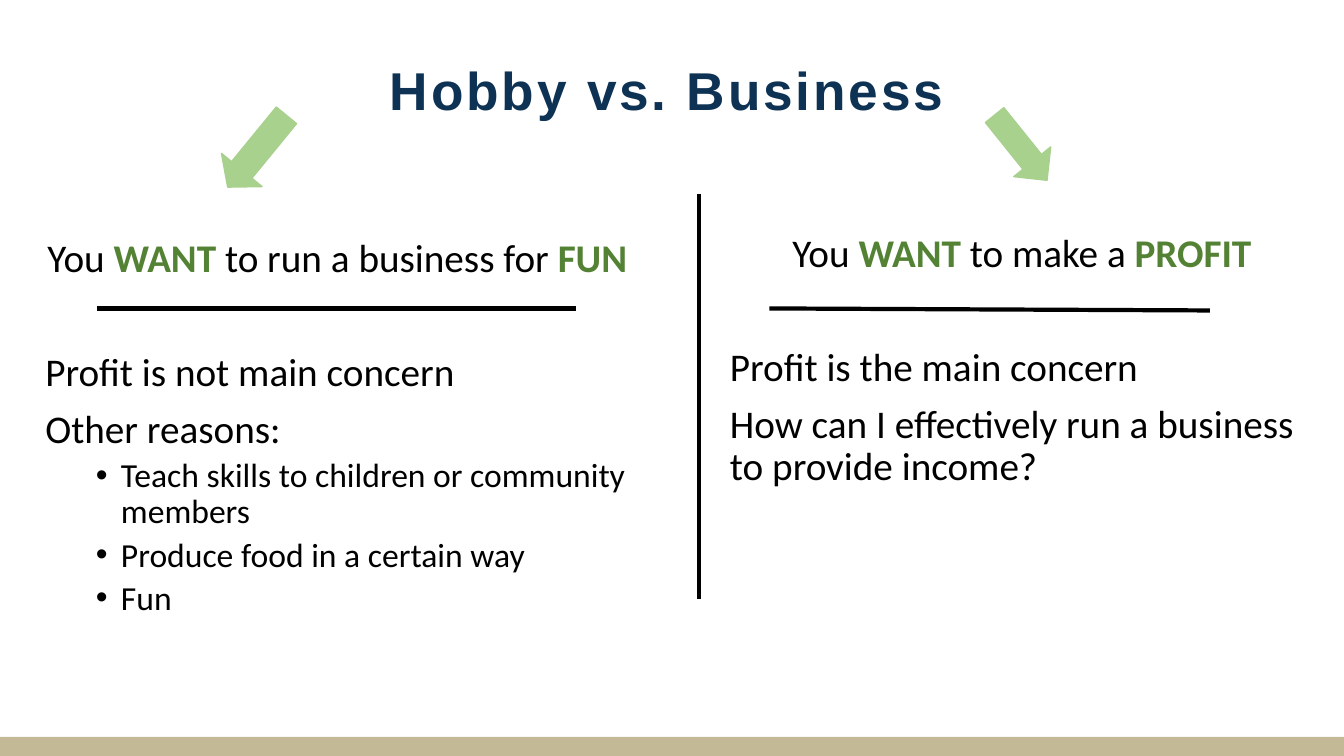
from lxml.etree import SubElement
from pptx import Presentation
from pptx.dml.color import RGBColor
from pptx.enum.shapes import MSO_CONNECTOR as CONN, MSO_SHAPE as SHAPE
from pptx.enum.text import MSO_ANCHOR as ANCHOR, MSO_AUTO_SIZE as AUTO, PP_ALIGN as ALIGN
from pptx.oxml.ns import qn
from pptx.util import Inches, Pt

COLORS = {"navy": "0D3254", "black": "000000", "green": "548235",
          "arrow": "A9D18E", "band": "C3B997"}
FRAME = {"word_wrap": True, "auto_size": AUTO.NONE, "margin_left": 0,
         "margin_right": 0, "margin_top": 0, "margin_bottom": 0}
COLUMN_WIDTH = 5.79
COLUMNS = [
    {"left": 0.45, "top": 2.37,
     "heading": ["You ", "WANT", " to run a business for ", "FUN"],
     "body": [("Profit is not main concern", 0), ("Other reasons:", 0),
              ("Teach skills to children or community members", 1),
              ("Produce food in a certain way", 1), ("Fun", 1)]},
    {"left": 7.24, "top": 2.32,
     "heading": ["You ", "WANT", " to make a ", "PROFIT"],
     "body": [("Profit is the main concern", 0),
              ("How can I effectively run a business to provide income?", 0)]},
]
RULES = [(0.96, 3.06, 5.71, 3.06), (7.63, 3.06, 12, 3.08), (6.93, 1.92, 6.93, 5.94)]
ARROWS = [((2.29, 1.04, 0.52, 0.92), 39.3, 0.423), ((9.89, 1.05, 0.47, 0.83), 321.2, 0.5)]


def rgb(name):
    """Return the named colour."""
    return RGBColor.from_string(COLORS[name])


def apply(obj, values):
    """Set each attribute of an object from a dict."""
    for key, value in values.items():
        setattr(obj, key, value)


def place(sp, left, top, width, height, anchor=ANCHOR.TOP):
    """Move a placeholder and return its formatted text frame."""
    apply(sp, {"left": Inches(left), "top": Inches(top),
               "width": Inches(width), "height": Inches(height)})
    apply(sp.text_frame, {**FRAME, "vertical_anchor": anchor})
    return sp.text_frame


def add_run(p, text, color, size, bold=False, name="Calibri"):
    """Add a formatted run to a paragraph."""
    r = p.add_run()
    r.text = text
    apply(r.font, {"size": Pt(size), "bold": bold, "name": name})
    r.font.color.rgb = rgb(color)
    return r


def set_bullet(p, level):
    """Give second-level paragraphs a bullet and the others none."""
    pPr = p._p.get_or_add_pPr()
    pPr.set("marL", str(Inches(0.75 * level)))
    pPr.set("indent", str(Inches(-0.25 * level)))
    if level:
        SubElement(pPr, qn("a:buFont"), typeface="Arial")
        SubElement(pPr, qn("a:buChar"), char="•")
    else:
        SubElement(pPr, qn("a:buNone"))


def fill_title(sp):
    """Write the letter-spaced title."""
    tf = place(sp, 0.88, 0.51, 11.47, 0.69, ANCHOR.BOTTOM)
    p = tf.paragraphs[0]
    p.alignment = ALIGN.CENTER
    r = add_run(p, "Hobby vs. Business", "navy", 38, True, "Arial")
    r.font._element.set("spc", "200")


def fill_heading(sp, column):
    """Write a column heading with every second part highlighted."""
    tf = place(sp, column["left"], column["top"], COLUMN_WIDTH, 0.5)
    p = tf.paragraphs[0]
    apply(p, {"alignment": ALIGN.CENTER, "line_spacing": 0.9, "space_before": Pt(0)})
    for i, text in enumerate(column["heading"]):
        strong = i % 2 == 1
        add_run(p, text, "green" if strong else "black", 28, strong)


def fill_body(sp, column):
    """Write the list of a column."""
    tf = place(sp, column["left"], column["top"] + 1.13, COLUMN_WIDTH, 2.9)
    for i, (text, level) in enumerate(column["body"]):
        p = tf.add_paragraph() if i else tf.paragraphs[0]
        set_bullet(p, level)
        before = (5 if level else 10) if i else 0
        apply(p, {"level": level, "alignment": ALIGN.LEFT,
                  "line_spacing": 0.9, "space_before": Pt(before)})
        add_run(p, text, "black", 24 if level else 28)


def add_rule(slide, *ends):
    """Draw a black line between two points."""
    line = slide.shapes.add_connector(CONN.STRAIGHT, *map(Inches, ends))
    line.line.color.rgb = rgb("black")
    line.line.width = Pt(3)
    SubElement(line._element.spPr, qn("a:effectLst"))


def add_solid(slide, kind, box, color):
    """Draw a flat shape in one colour."""
    sp = slide.shapes.add_shape(kind, *map(Inches, box))
    sp.shadow.inherit = False
    sp.fill.solid()
    sp.fill.fore_color.rgb = rgb(color)
    sp.line.fill.background()
    return sp


def add_arrow(slide, box, rotation, head):
    """Draw a rotated block arrow."""
    sp = add_solid(slide, SHAPE.DOWN_ARROW, box, "arrow")
    sp.rotation = rotation
    sp.adjustments[1] = head
    sp.line.color.rgb = rgb("arrow")
    sp.line.width = Pt(1)


def main():
    """Build and save the slide."""
    prs = Presentation()
    prs.slide_width, prs.slide_height = Inches(13.33), Inches(7.5)
    slide = prs.slides.add_slide(prs.slide_layouts[4])
    title, *boxes = slide.placeholders
    add_solid(slide, SHAPE.RECTANGLE, (0, 7.31, 13.33, 0.19), "band")
    fill_title(title)
    for column, heading, body in zip(COLUMNS, boxes[::2], boxes[1::2]):
        fill_heading(heading, column)
        fill_body(body, column)
    for ends in RULES:
        add_rule(slide, *ends)
    for arrow in ARROWS:
        add_arrow(slide, *arrow)
    prs.save("out.pptx")


if __name__ == "__main__":
    main()
